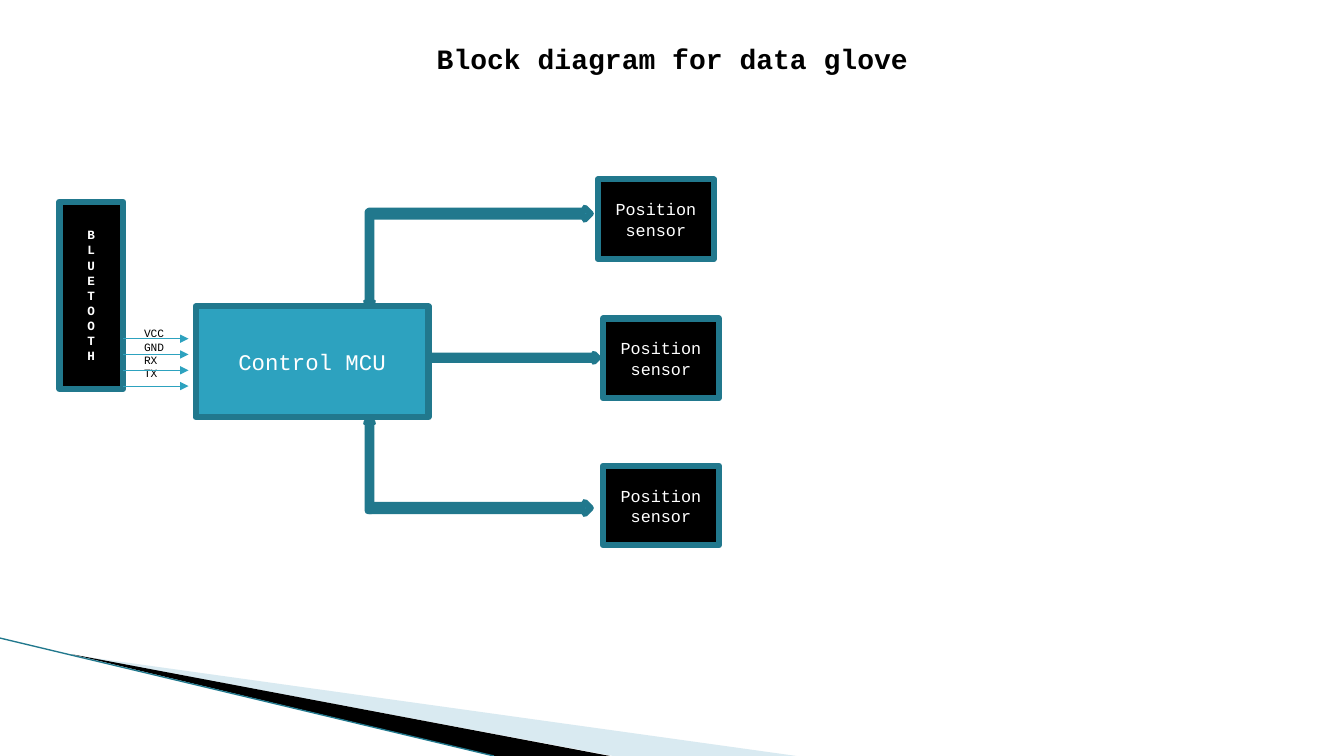
from lxml import etree
from pptx import Presentation
from pptx.dml.color import RGBColor
from pptx.enum.shapes import MSO_CONNECTOR, MSO_SHAPE
from pptx.enum.text import MSO_ANCHOR, MSO_AUTO_SIZE, PP_ALIGN
from pptx.oxml.ns import qn
from pptx.util import Inches, Pt

RECTANGLE = MSO_SHAPE.RECTANGLE
RIGHT_ARROW, DOWN_ARROW = MSO_SHAPE.RIGHT_ARROW, MSO_SHAPE.DOWN_ARROW
STRAIGHT = MSO_CONNECTOR.STRAIGHT
MIDDLE = MSO_ANCHOR.MIDDLE
LEFT, CENTER = PP_ALIGN.LEFT, PP_ALIGN.CENTER
FIT_SHAPE = MSO_AUTO_SIZE.SHAPE_TO_FIT_TEXT

COLORS = {
    "black": "000000",
    "white": "FFFFFF",
    "teal": "2DA2BF",
    "dark_teal": "21788D",
    "pale_blue": "A0CBDC",
}


class DiagramSlide:
    """Holds the diagram style and the slide being drawn."""

    font_name = "Courier New"
    border_width = 4.33

    def __init__(self, slide):
        self.shapes = slide.shapes

    def color(self, name):
        return RGBColor.from_string(COLORS[name])

    def fill_text(self, frame, lines, align, color, **font_format):
        frame.text = "\n".join(lines)
        for paragraph in frame.paragraphs:
            paragraph.alignment = align
            for name, value in {"name": self.font_name, **font_format}.items():
                setattr(paragraph.font, name, value)
            paragraph.font.color.rgb = self.color(color)

    def outlined(self, preset, box, fill):
        shape = self.shapes.add_shape(preset, *map(Inches, box))
        shape.shadow.inherit = False
        shape.fill.solid()
        shape.fill.fore_color.rgb = self.color(fill)
        shape.line.color.rgb = self.color("dark_teal")
        shape.line.width = Pt(self.border_width)
        return shape

    def block(self, box, lines, fill, size, bold=False):
        frame = self.outlined(RECTANGLE, box, fill).text_frame
        frame.word_wrap = True
        frame.vertical_anchor = MIDDLE
        self.fill_text(frame, lines, CENTER, "white", size=Pt(size), bold=bold)

    def block_arrow(self, preset, box, rotation=0):
        self.outlined(preset, box, "teal").rotation = rotation

    def label(self, box, lines, align, size, bold=False, wrap=True):
        frame = self.shapes.add_textbox(*map(Inches, box)).text_frame
        frame.word_wrap = wrap
        frame.auto_size = FIT_SHAPE
        self.fill_text(frame, lines, align, "black", size=Pt(size), bold=bold)

    def line(self, start, end, color, width, arrow=False):
        connector = self.shapes.add_connector(STRAIGHT, *map(Inches, start + end))
        connector.line.color.rgb = self.color(color)
        connector.line.width = Pt(width)
        properties = connector._element.spPr
        if arrow:
            outline = properties.find(qn("a:ln"))
            etree.SubElement(outline, qn("a:tailEnd"), type="triangle")
        etree.SubElement(properties, qn("a:effectLst"))

    def wedge(self, points, fill, opacity=100):
        corners = [(Inches(x), Inches(y)) for x, y in points]
        builder = self.shapes.build_freeform(*corners[0])
        builder.add_line_segments(corners[1:], close=True)
        shape = builder.convert_to_shape()
        shape.shadow.inherit = False
        shape.fill.solid()
        shape.fill.fore_color.rgb = self.color(fill)
        shape.line.fill.background()
        if opacity < 100:
            fill_color = shape._element.spPr.find(qn("a:solidFill"))[0]
            etree.SubElement(fill_color, qn("a:alpha"), val=str(opacity * 1000))


def main():
    presentation = Presentation()
    presentation.slide_width = Inches(13.33)
    presentation.slide_height = Inches(7.5)
    diagram = DiagramSlide(
        presentation.slides.add_slide(presentation.slide_layouts[6])
    )

    diagram.wedge([(0.73, 6.5), (7.9, 7.5), (6.08, 7.5)], "pale_blue", opacity=40)
    diagram.wedge([(0.71, 6.49), (6.05, 7.5), (4.9, 7.5)], "black")
    diagram.line((0, 6.33), (4.9, 7.5), "dark_teal", 0.95)

    diagram.block((0.59, 2, 0.63, 1.86), "BLUETOOTH", "black", 9, bold=True)
    signals = ["VCC", "GND", "RX", "TX"]
    diagram.label((1.33, 3.19, 0.45, 0.64), signals, LEFT, 8, wrap=False)
    for index in range(len(signals)):
        y = 3.36 + index * 0.47 / 3
        diagram.line((1.22, y), (1.87, y), "teal", 0.75, arrow=True)

    diagram.block((1.94, 3.04, 2.31, 1.1), ["Control MCU"], "teal", 16)
    for box in [(3.66, 2.06, 2.2, 0.12), (4.25, 3.51, 1.68, 0.08),
                (3.66, 4.98, 2.2, 0.12)]:
        diagram.block_arrow(RIGHT_ARROW, box)
    diagram.block_arrow(DOWN_ARROW, (3.63, 2.1, 0.07, 0.93))
    diagram.block_arrow(DOWN_ARROW, (3.63, 4.16, 0.07, 0.91), rotation=180)

    for left, top in [(5.93, 1.78), (5.98, 3.16), (5.98, 4.62)]:
        diagram.block((left, top, 1.15, 0.79), ["Position sensor"], "black", 12)

    diagram.label((0.16, 0.36, 13.02, 0.44), ["Block diagram for data glove"],
                  CENTER, 20, bold=True)
    presentation.save("out.pptx")


if __name__ == "__main__":
    main()
